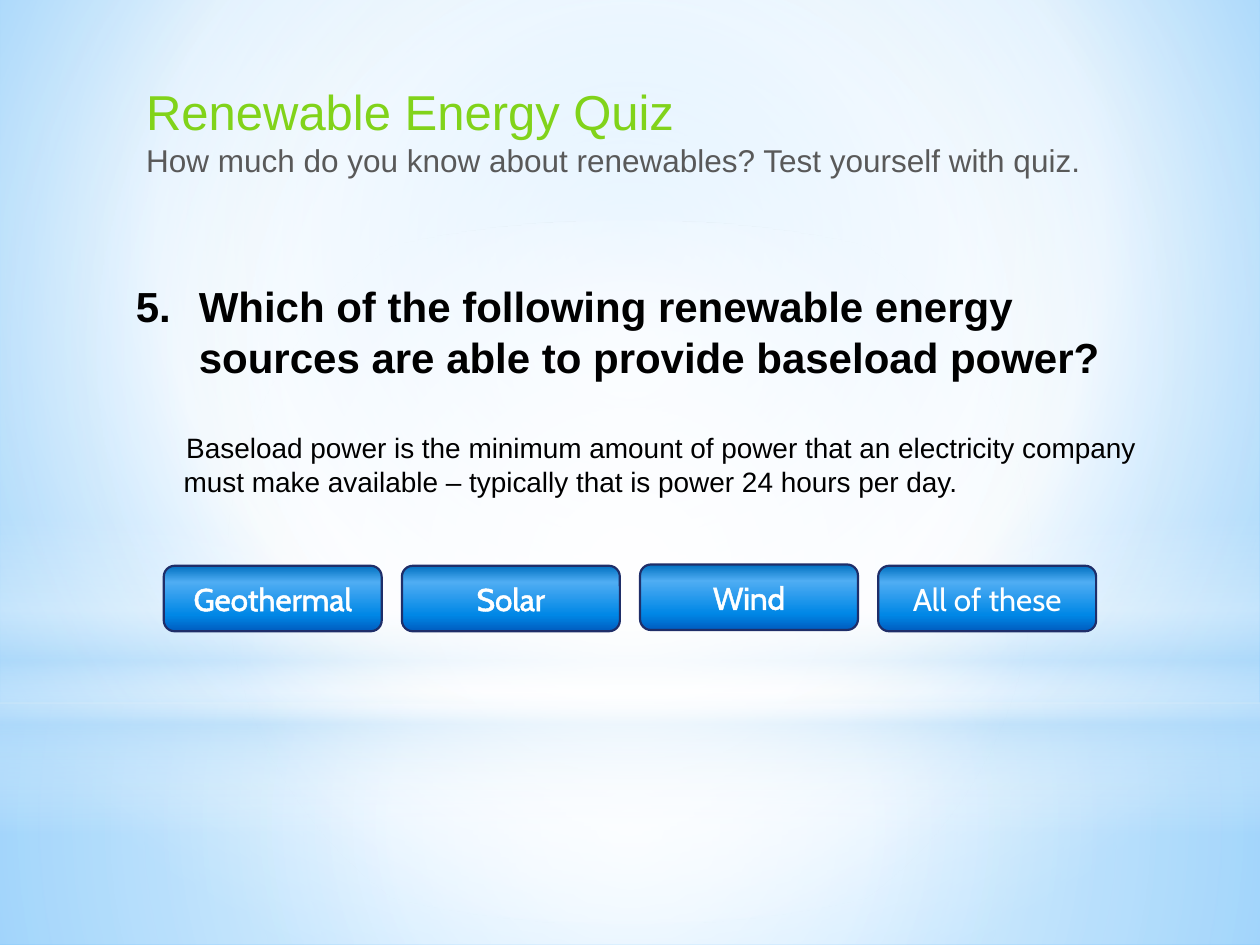
from dataclasses import dataclass
from typing import Optional

from lxml import etree
from pptx import Presentation
from pptx.dml.color import RGBColor
from pptx.enum.shapes import MSO_SHAPE
from pptx.enum.text import MSO_ANCHOR, MSO_AUTO_SIZE, PP_ALIGN
from pptx.oxml import parse_xml
from pptx.oxml.ns import nsdecls, qn
from pptx.util import Inches, Pt

RECT = MSO_SHAPE.RECTANGLE
ROUND = MSO_SHAPE.ROUNDED_RECTANGLE
OVAL = MSO_SHAPE.OVAL
TOP = MSO_ANCHOR.TOP
MIDDLE = MSO_ANCHOR.MIDDLE
LEFT = PP_ALIGN.LEFT
CENTER = PP_ALIGN.CENTER
FIXED = MSO_AUTO_SIZE.NONE

WHITE = RGBColor(0xFF, 0xFF, 0xFF)
BLACK = RGBColor(0x00, 0x00, 0x00)
GRAY = RGBColor(0x59, 0x59, 0x59)
LIME = RGBColor(0x81, 0xD3, 0x1A)
NAVY = RGBColor(0x1F, 0x2E, 0x69)
SKY = RGBColor(0x9E, 0xD5, 0xFF)
AZURE = RGBColor(0x5B, 0xB9, 0xFF)
PALE = RGBColor(0xB4, 0xDC, 0xFA)
BLUE = RGBColor(0x00, 0x70, 0xC0)
LIGHT = RGBColor(0x4F, 0xAD, 0xF3)
BRIGHT = RGBColor(0x00, 0x87, 0xE6)
DEEP = RGBColor(0x00, 0x5C, 0xBF)


@dataclass
class Stop:
    pos: int
    color: RGBColor
    alpha: int = 100


@dataclass
class Blend:
    stops: list[Stop]
    focus: Optional[tuple[int, int, int, int]] = None


@dataclass
class Glow:
    kind: int
    top: float
    height: float
    blend: Blend


@dataclass
class Choice:
    label: str
    top: float = 4.49
    outline: bool = True


MID = (50, 50, 50, 50)
BACK = Blend([Stop(0, SKY), Stop(60, WHITE), Stop(100, AZURE)], (20, 10, 20, 60))
GLOWS = [
    Glow(RECT, 5.58, 1.92, Blend(
        [Stop(0, WHITE, 91), Stop(37, WHITE, 76), Stop(100, PALE, 79)], MID)),
    Glow(RECT, 0, 5.58, Blend(
        [Stop(0, WHITE, 89), Stop(48, WHITE, 62), Stop(100, PALE, 79)], MID)),
    Glow(RECT, 4.12, 2.5, Blend(
        [Stop(0, WHITE, 0), Stop(29, WHITE, 30), Stop(45, PALE, 40),
         Stop(55, WHITE, 26), Stop(65, PALE, 60), Stop(100, WHITE, 0)])),
    Glow(OVAL, 1.75, 5.58, Blend([Stop(0, WHITE), Stop(56, WHITE, 0)], MID)),
]
GLOSS = Blend([Stop(0, BLUE), Stop(25, LIGHT), Stop(75, BRIGHT), Stop(100, DEEP)])
CHOICES = [
    Choice("Geothermal"),
    Choice("Solar"),
    Choice("Wind", top=4.48),
    Choice("All of these", outline=False),
]


def make_grad(blend: Blend):
    stops = "".join(
        f'<a:gs pos="{s.pos * 1000}"><a:srgbClr val="{s.color}">'
        f'<a:alpha val="{s.alpha * 1000}"/></a:srgbClr></a:gs>'
        for s in blend.stops)
    if blend.focus:
        sides = " ".join(f'{k}="{v * 1000}"' for k, v in zip("ltrb", blend.focus))
        way = f'<a:path path="circle"><a:fillToRect {sides}/></a:path>'
    else:
        way = '<a:lin ang="5400000" scaled="0"/>'
    return parse_xml(
        f'<a:gradFill {nsdecls("a")} rotWithShape="1">'
        f'<a:gsLst>{stops}</a:gsLst>{way}</a:gradFill>')


def set_grad(fill, root, blend: Blend) -> None:
    fill.solid()
    old = root.find(".//" + qn("a:solidFill"))
    old.getparent().replace(old, make_grad(blend))


def style(para, size: int, color: RGBColor, name: str = "Arial",
          bold: bool = False, align=LEFT) -> None:
    para.alignment = align
    font = para.font
    font.name, font.size, font.bold = name, Pt(size), bold
    font.color.rgb = color


def add_glow(slide, glow: Glow) -> None:
    shape = slide.shapes.add_shape(
        glow.kind, 0, Inches(glow.top), Inches(10), Inches(glow.height))
    shape.shadow.inherit = False
    set_grad(shape.fill, shape.element.spPr, glow.blend)
    shape.line.fill.background()


def add_choice(slide, left: float, choice: Choice) -> None:
    shape = slide.shapes.add_shape(
        ROUND, Inches(left), Inches(choice.top), Inches(1.73), Inches(0.52))
    shape.shadow.inherit = False
    set_grad(shape.fill, shape.element.spPr, GLOSS)
    shape.line.color.rgb = NAVY
    shape.line.width = Pt(1.25)
    frame = shape.text_frame
    frame.vertical_anchor = MIDDLE
    para = frame.paragraphs[0]
    run = para.add_run()
    run.text = choice.label
    style(para, 18, WHITE, "Cabin", align=CENTER)
    if choice.outline:
        run._r.get_or_add_rPr().insert(0, parse_xml(
            f'<a:ln {nsdecls("a")} w="{Pt(1.45)}"><a:solidFill>'
            f'<a:srgbClr val="{WHITE}"/></a:solidFill></a:ln>'))


def add_title(slide) -> None:
    title = slide.shapes.title
    slide.shapes.element.append(title.element)
    title.left, title.top = Inches(1.06), Inches(0.6)
    title.width, title.height = Inches(7.64), Inches(0.88)
    frame = title.text_frame
    frame.text = ("Renewable Energy Quiz\n"
                  "How much do you know about renewables? Test yourself with quiz.")
    frame.auto_size = FIXED
    frame.vertical_anchor = TOP
    head, sub = frame.paragraphs
    style(head, 28, LIME)
    style(sub, 18, GRAY)


def indent(para, left: float, first: float):
    props = para._p.get_or_add_pPr()
    props.set("marL", str(Inches(left)))
    props.set("indent", str(Inches(first)))
    return props


def add_question(slide) -> None:
    box = slide.shapes.add_textbox(
        Inches(0.98), Inches(2.18), Inches(8.27), Inches(2.15))
    frame = box.text_frame
    frame.word_wrap = True
    frame.text = (
        "Which of the following renewable energy sources are able to provide "
        "baseload power?\n"
        "Baseload power is the minimum amount of power that an electricity "
        "company must make available – typically that is power 24 hours per day.")
    ask, hint = frame.paragraphs
    style(ask, 24, BLACK, bold=True)
    mark = etree.Element(qn("a:buAutoNum"), type="arabicPeriod", startAt="5")
    indent(ask, 0.5, -0.5).insert(0, mark)
    style(hint, 16, BLACK)
    hint.space_before = Pt(28)
    indent(hint, 0.38, 0.02)


def main() -> None:
    deck = Presentation()
    deck.slide_width, deck.slide_height = Inches(10), Inches(7.5)
    slide = deck.slides.add_slide(deck.slide_layouts[5])
    set_grad(slide.background.fill, slide.element, BACK)
    for glow in GLOWS:
        add_glow(slide, glow)
    add_question(slide)
    add_title(slide)
    for i, choice in enumerate(CHOICES):
        add_choice(slide, 1.3 + 1.89 * i, choice)
    deck.save("out.pptx")


if __name__ == "__main__":
    main()
